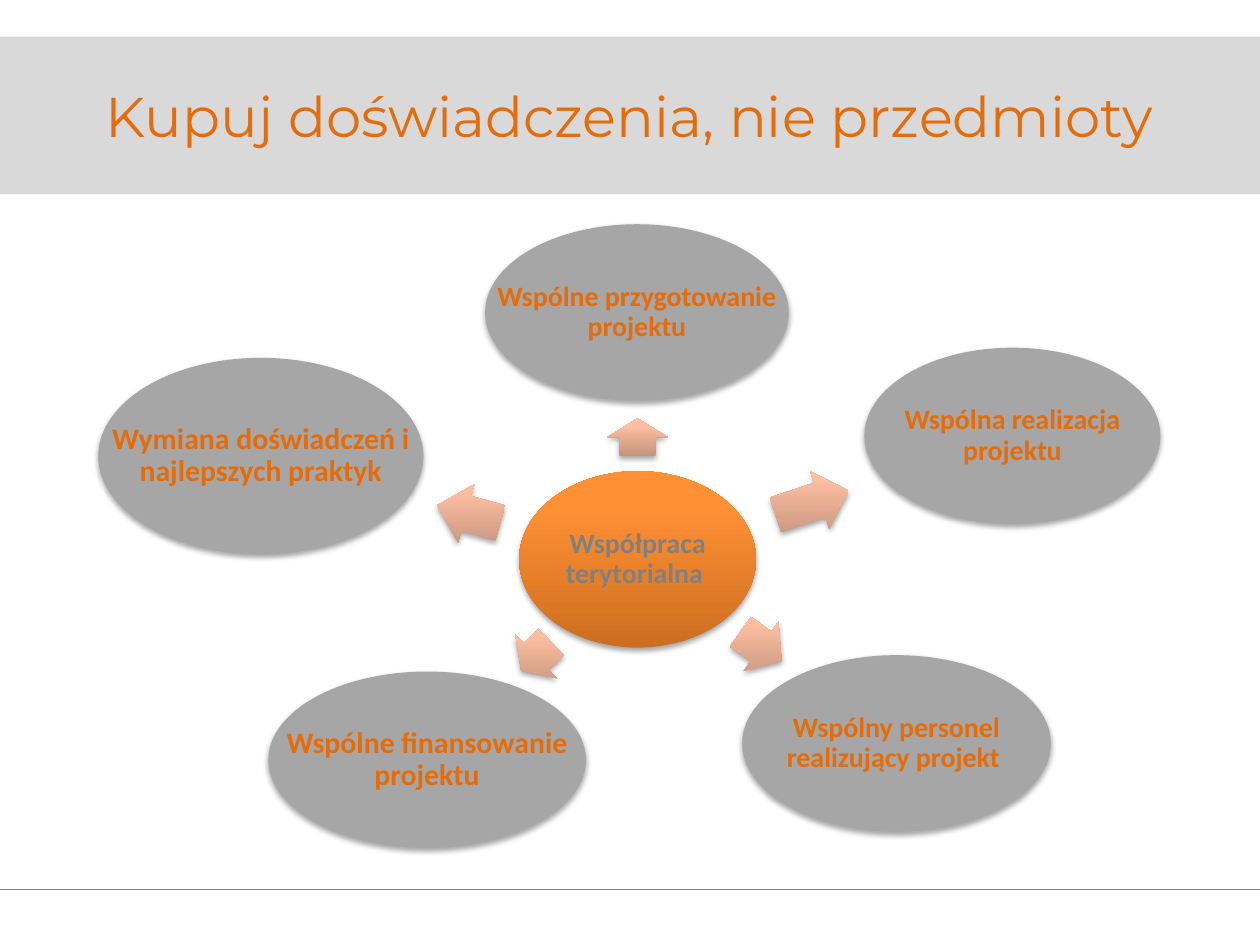
from copy import deepcopy

from pptx import Presentation
from pptx.dml.color import RGBColor
from pptx.enum.shapes import MSO_CONNECTOR, MSO_SHAPE
from pptx.enum.text import MSO_ANCHOR, PP_ALIGN
from pptx.oxml import parse_xml
from pptx.oxml.ns import nsdecls, qn
from pptx.util import Inches, Pt

OVAL, ARROW = MSO_SHAPE.OVAL, MSO_SHAPE.RIGHT_ARROW
STRAIGHT = MSO_CONNECTOR.STRAIGHT
MIDDLE, CENTER = MSO_ANCHOR.MIDDLE, PP_ALIGN.CENTER
TITLE_ONLY = 5
COLUMNS, ROWS = 100, 75

COLORS = {"accent": "E46C0A", "band": "D9D9D9", "oval": "A6A6A6", "muted": "808080"}
HUB_STOPS = [(0, "CC6E20"), (0.8, "FF9034"), (1, "FF9136")]
ARROW_STOPS = [(0, "C3937C"), (0.8, "FDBFA1"), (1, "FFBFA1")]
SHADOW = (
    f'<a:effectLst {nsdecls("a")}><a:outerShdw blurRad="40000" dist="23000" dir="5400000" '
    'rotWithShape="0"><a:srgbClr val="000000"><a:alpha val="35000"/></a:srgbClr>'
    '</a:outerShdw></a:effectLst>'
)

HUB = ("Współpraca terytorialna ", (41.2, 37.4, 18.8, 14))
SPOKES = [
    ("Wspólne przygotowanie projektu", 16, (38.5, 17.8, 24.1, 14), (49.1, 32.3, 3), 270),
    ("Wspólna realizacja projektu", 16, (68.6, 27.6, 23.5, 14), (61.4, 37.5, 6.1), 341.7),
    ("Wspólny personel realizujący projekt ", 16, (58.9, 52, 24.5, 14), (58.4, 48.9, 4), 35.2),
    ("Wspólne finansowanie projektu", 17, (21.3, 53.3, 25.2, 14), (40.9, 49.7, 3.3), 136.4),
    ("Wymiana doświadczeń i najlepszych praktyk", 17, (7.8, 28.4, 25.8, 15.6),
     (34.6, 38.4, 5.2), 195.5),
]
ARROW_ROWS = 4.8


def assign(target, values):
    """Set each named attribute of the target."""
    for name, value in values.items():
        setattr(target, name, value)


class SlideBuilder:
    """Holds the style and the current slide, measured on a column and row grid."""

    def __init__(self, deck):
        """Add a slide with a title to the deck."""
        self.column = deck.slide_width / COLUMNS
        self.row = deck.slide_height / ROWS
        self.page = deck.slides.add_slide(deck.slide_layouts[TITLE_ONLY])

    def area(self, left, top, width, height):
        """Turn grid units into slide lengths."""
        return (int(left * self.column), int(top * self.row),
                int(width * self.column), int(height * self.row))

    def label(self, frame, text, size, font, color, bold=False, spacing=1.0):
        """Put one centred paragraph in a text frame."""
        assign(frame, {"word_wrap": True, "vertical_anchor": MIDDLE})
        para = frame.paragraphs[0]
        assign(para, {"alignment": CENTER, "line_spacing": spacing})
        span = para.add_run()
        span.text = text
        assign(span.font, {"name": font, "size": Pt(size), "bold": bold})
        span.font.color.rgb = RGBColor.from_string(COLORS[color])

    def title(self, text, place):
        """Place the title on its filled band."""
        band = self.page.shapes.title
        assign(band, dict(zip(("left", "top", "width", "height"), self.area(*place))))
        band.fill.solid()
        band.fill.fore_color.rgb = RGBColor.from_string(COLORS["band"])
        self.label(band.text_frame, text, 32, "Montserrat", "accent")

    def rule(self, row):
        """Draw a thin line across the page."""
        left, top, width, _ = self.area(0, row, COLUMNS, 0)
        line = self.page.shapes.add_connector(STRAIGHT, left, top, left + width, top)
        line.line.color.rgb = RGBColor.from_string(COLORS["muted"])
        line.line.width = Pt(0.75)
        line._element.spPr.append(parse_xml(f'<a:effectLst {nsdecls("a")}/>'))

    def shape(self, kind, place, stops=None, rotation=0):
        """Add a shadowed shape with a plain or an upward gradient fill."""
        shape = self.page.shapes.add_shape(kind, *self.area(*place))
        shape.rotation = rotation
        shape.line.fill.background()
        if stops:
            self.shade(shape, stops)
        else:
            shape.fill.solid()
            shape.fill.fore_color.rgb = RGBColor.from_string(COLORS["oval"])
        shape._element.spPr.append(parse_xml(SHADOW))
        return shape

    def shade(self, shape, stops):
        """Fill a shape with a gradient that stays upright when it turns."""
        shape.fill.gradient()
        shape.fill.gradient_angle = 90
        gradient = shape._element.spPr.find(qn("a:gradFill"))
        gradient.set("rotWithShape", "0")
        stop_list = gradient.find(qn("a:gsLst"))
        stop_list.append(deepcopy(stop_list[0]))
        for stop, (position, color) in zip(shape.fill.gradient_stops, stops):
            stop.position = position
            stop.color.rgb = RGBColor.from_string(color)

    def oval(self, text, place, size, color, stops=None):
        """Add an ellipse with a label as wide as the ellipse."""
        self.shape(OVAL, place, stops)
        box = self.page.shapes.add_textbox(*self.area(*place))
        sides = ("margin_left", "margin_top", "margin_right", "margin_bottom")
        assign(box.text_frame, dict.fromkeys(sides, Inches(0.02)))
        self.label(box.text_frame, text, size, "Calibri", color, True, 0.9)

    def arrow(self, left, top, width, rotation):
        """Add a block arrow turned away from the hub."""
        arrow = self.shape(ARROW, (left, top, width, ARROW_ROWS), ARROW_STOPS, rotation)
        arrow.adjustments[0] = 0.6
        arrow.adjustments[1] = 0.5


def main():
    """Build the hub and spoke slide."""
    deck = Presentation()
    assign(deck, {"slide_width": Inches(10), "slide_height": Inches(7.5)})
    builder = SlideBuilder(deck)
    builder.rule(70.6)
    builder.title("Kupuj doświadczenia, nie przedmioty", (0, 2.9, COLUMNS, 12.5))
    builder.oval(*HUB, 16, "muted", HUB_STOPS)
    for text, size, place, arrow, rotation in SPOKES:
        builder.arrow(*arrow, rotation)
        builder.oval(text, place, size, "accent")
    deck.save("out.pptx")


if __name__ == "__main__":
    main()
